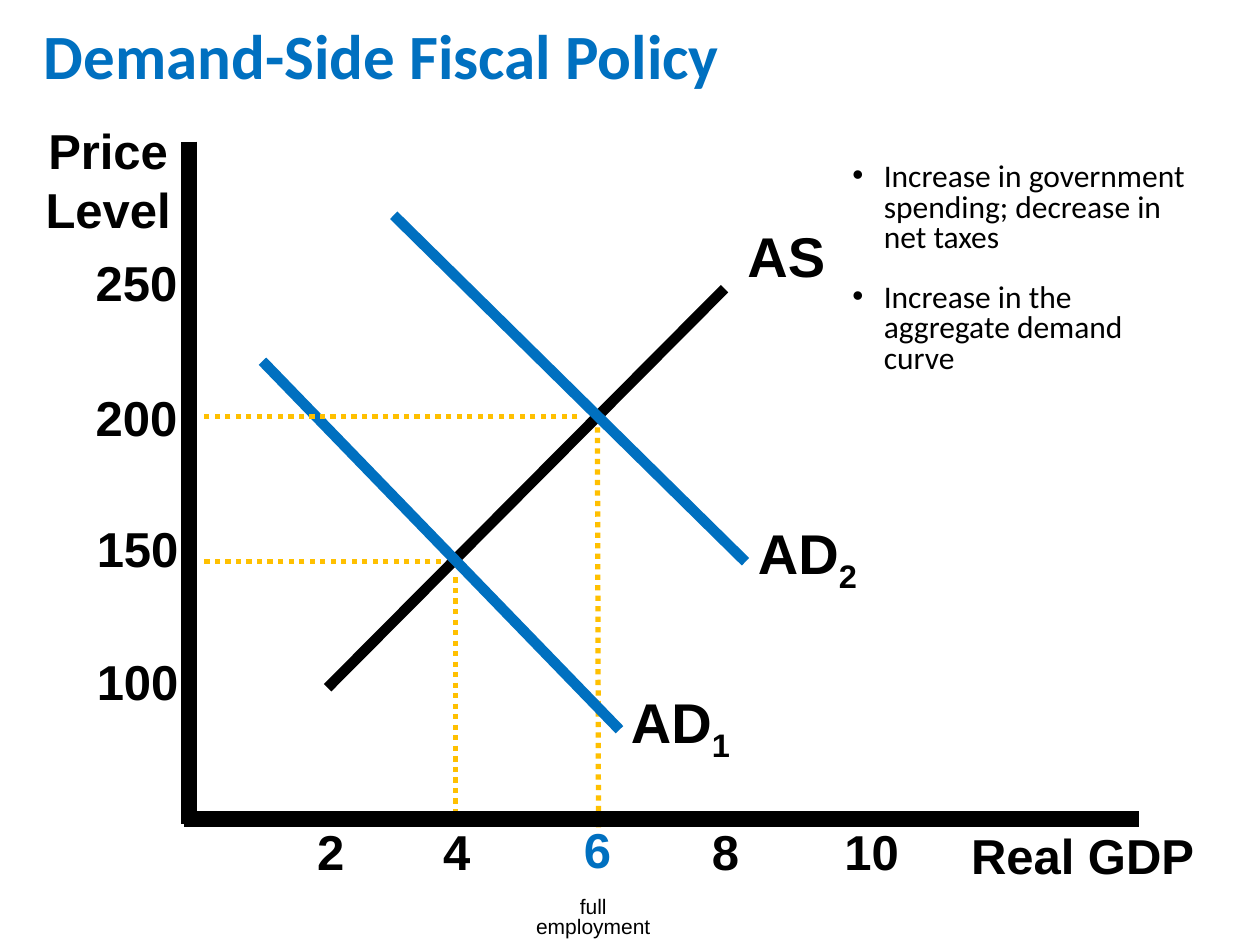
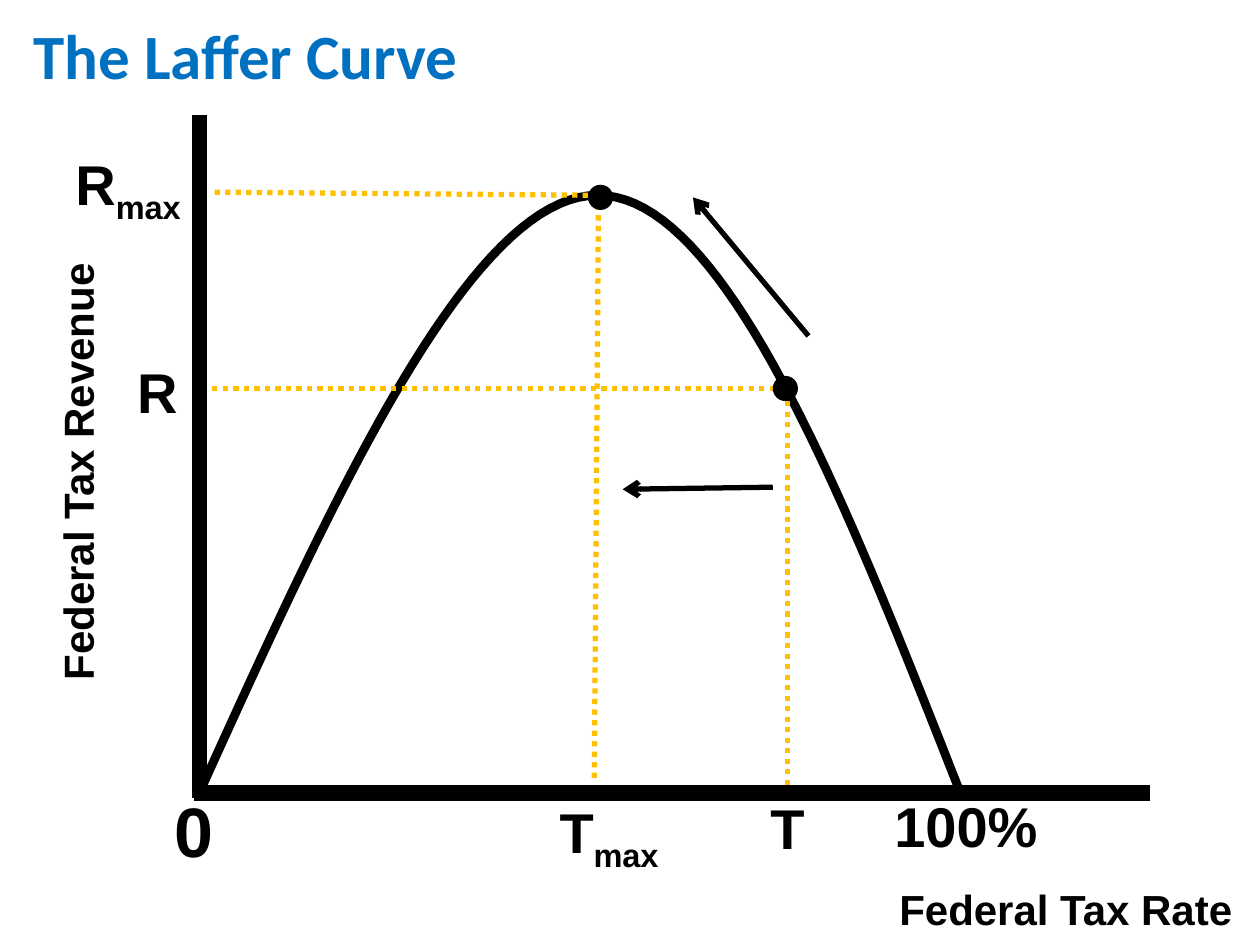
from lxml import etree
from pptx import Presentation
from pptx.dml.color import RGBColor
from pptx.enum.dml import MSO_LINE
from pptx.enum.shapes import MSO_CONNECTOR, MSO_SHAPE
from pptx.enum.text import PP_ALIGN
from pptx.oxml.ns import qn
from pptx.util import Inches, Pt

LEFT, MID = PP_ALIGN.LEFT, PP_ALIGN.CENTER
STRAIGHT, OVAL = MSO_CONNECTOR.STRAIGHT, MSO_SHAPE.OVAL
DOTS = MSO_LINE.ROUND_DOT

HUES = {"ink": "000000", "blue": "0070C0", "gold": "FFC000", "white": "FFFFFF"}
RGB = {name: RGBColor.from_string(code) for name, code in HUES.items()}

# Grid: 120 columns by 90 rows of square cells
deck = Presentation()
deck.slide_width, deck.slide_height = Inches(10), Inches(7.5)
CELL = deck.slide_width / 120


def put(page, box, runs, size, hue="ink", font="Arial", bold=True,
        align=MID, gap=0.8):
    """Write runs in a box; every run after the first is a subscript."""
    area = page.shapes.add_textbox(*(round(n * CELL) for n in box))
    area.text_frame.word_wrap = True
    para = area.text_frame.paragraphs[0]
    para.alignment, para.line_spacing = align, gap
    for i, word in enumerate(runs):
        run = para.add_run()
        run.text = word
        run.font.name, run.font.size, run.font.bold = font, Pt(size), bold
        run.font.color.rgb = RGB[hue]
        if i:
            run.font._element.set("baseline", "-25000")
    return area


def rule(page, ends, hue="ink", width=6, dash=None, arrow=False):
    """Draw a straight line between two grid points."""
    line = page.shapes.add_connector(STRAIGHT, *(round(n * CELL) for n in ends))
    line.line.color.rgb, line.line.width = RGB[hue], Pt(width)
    if dash:
        line.line.dash_style = dash
    if arrow:
        etree.SubElement(line.line._get_or_add_ln(), qn("a:tailEnd"), type="arrow")
    etree.SubElement(line._element.spPr, qn("a:effectLst"))


# Shared pages and titles
pages = []
for words, left, wide in [("Demand-Side Fiscal Policy", 3, 91),
                          ("The Laffer Curve", 2, 57)]:
    page = deck.slides.add_slide(deck.slide_layouts[6])
    head = put(page, (left, 1, wide, 8.5), [words], 36, "blue", "Calibri",
               align=LEFT, gap=1)
    head.fill.solid()
    head.fill.fore_color.rgb = RGB["white"]
    pages.append(page)
fiscal, laffer = pages

# Fiscal policy: guides and curves, from back to front
for ends in [(56.9, 39.7, 57, 78.8), (43.4, 55, 43.4, 78)]:
    rule(fiscal, ends, "gold", 3, DOTS)
rule(fiscal, (69, 27.5, 31.2, 65.5))
rule(fiscal, (25, 34.4, 59, 69.5), "blue")
for ends in [(42, 53.5, 19, 53.5), (55, 39.7, 19, 39.7)]:
    rule(fiscal, ends, "gold", 3, DOTS)
rule(fiscal, (37.5, 20.5, 71, 53.5), "blue")

# Fiscal policy: scales
for mark, mid in [("2", 31.5), ("4", 43.5), ("6", 56.9), ("8", 69.1), ("10", 83)]:
    full = mark == "6"
    put(fiscal, (mid - 5, 78.5 if full else 78.7, 10, 5.8), [mark], 28,
        "blue" if full else "ink")
for mark, mid, top in [("250", 13, 24.5), ("200", 13, 37.4),
                       ("150", 13.1, 49.9), ("100", 13.1, 62.5)]:
    put(fiscal, (mid - 8, top, 16, 5.8), [mark], 28)
put(fiscal, (49, 85, 15, 5), ["full employment"], 12, bold=False)
put(fiscal, (0.6, 10.9, 19.4, 12.5), ["Price Level"], 28, gap=1)
put(fiscal, (90.8, 78, 24.6, 6.2), ["Real GDP"], 28, gap=1)

# Fiscal policy: curve names
for runs, left, top in [(["AS"], 70, 20.5), (["AD", "1"], 58.9, 64.9),
                        (["AD", "2"], 71, 48.8)]:
    put(fiscal, (left, top, 14, 7), runs, 32, align=LEFT, gap=1)

# Fiscal policy: bullets
for words, top in [("Increase in government spending; decrease in net taxes", 15),
                   ("Increase in the aggregate demand curve", 26.5)]:
    note = put(fiscal, (80, top, 35, 10), [words], 18, font="Calibri",
               bold=False, align=LEFT)
    props = note.text_frame.paragraphs[0]._p.get_or_add_pPr()
    props.set("marL", str(Inches(0.25)))
    props.set("indent", str(-Inches(0.25)))
    etree.SubElement(props, qn("a:buFont"), typeface="Arial")
    etree.SubElement(props, qn("a:buChar"), char="•")

# Laffer curve: two cubic arcs sampled in equal steps
ARCS = [[(19, 75.5), (31.9, 47), (44.9, 18.6), (56.9, 18.6)],
        [(56.9, 18.6), (68.9, 18.5), (80.2, 46.8), (91.3, 75.1)]]
STEPS = 40
dots = [ARCS[0][0]]
for arc in ARCS:
    for i in range(1, STEPS + 1):
        t = i / STEPS
        parts = ((1 - t) ** 3, 3 * t * (1 - t) ** 2, 3 * t * t * (1 - t), t ** 3)
        dots.append(tuple(sum(k * p[axis] for k, p in zip(parts, arc))
                          for axis in (0, 1)))
pen = laffer.shapes.build_freeform(*(n * CELL for n in dots[0]))
pen.add_line_segments([(x * CELL, y * CELL) for x, y in dots[1:]], close=False)
curve = pen.convert_to_shape()
curve.shadow.inherit = False
curve.fill.background()
curve.line.color.rgb, curve.line.width = RGB["ink"], Pt(5)

# Laffer curve: guides, points and arrows
for ends in [(75, 37.2, 75, 74.8), (57, 18.5, 56.6, 74.5),
             (74.8, 37, 19, 37), (57, 18.6, 20, 18.3)]:
    rule(laffer, ends, "gold", 3, DOTS)
for x, y in [(57.2, 18.8), (74.8, 37)]:
    spot = laffer.shapes.add_shape(
        OVAL, *(round(n * CELL) for n in (x - 1.2, y - 1.2, 2.4, 2.4)))
    spot.shadow.inherit = False
    spot.fill.solid()
    spot.fill.fore_color.rgb = RGB["ink"]
    spot.line.fill.background()
for ends in [(77, 32, 66, 18.8), (73.6, 46.4, 59.3, 46.6)]:
    rule(laffer, ends, width=3, arrow=True)

# Laffer curve: labels
for runs, left, top, wide, size in [
        (["R", "max"], 2, 14.3, 20.4, 32), (["R"], 9, 34.7, 12, 32),
        (["0"], 15, 76, 7, 40), (["T", "max"], 50, 76, 16, 32),
        (["T"], 70, 76.2, 10, 32), (["100%"], 82, 76, 20, 32)]:
    put(laffer, (left, top, wide, 6.4), runs, size)
put(laffer, (82, 83.6, 39, 5.5), ["Federal Tax Rate"], 24, gap=1)
side = put(laffer, (-14.4, 42.2, 43, 5.5), ["Federal Tax Revenue"], 24, gap=1)
side.rotation = 270

# Shared axes: upright, then level
for page, x, top in [(fiscal, 18, 13.5), (laffer, 19, 11)]:
    rule(page, (x, top, x, top + 65), width=9)
    rule(page, (x - 0.5, top + 64.5, x + 90.5, top + 64.5), width=9)

deck.save("out.pptx")
